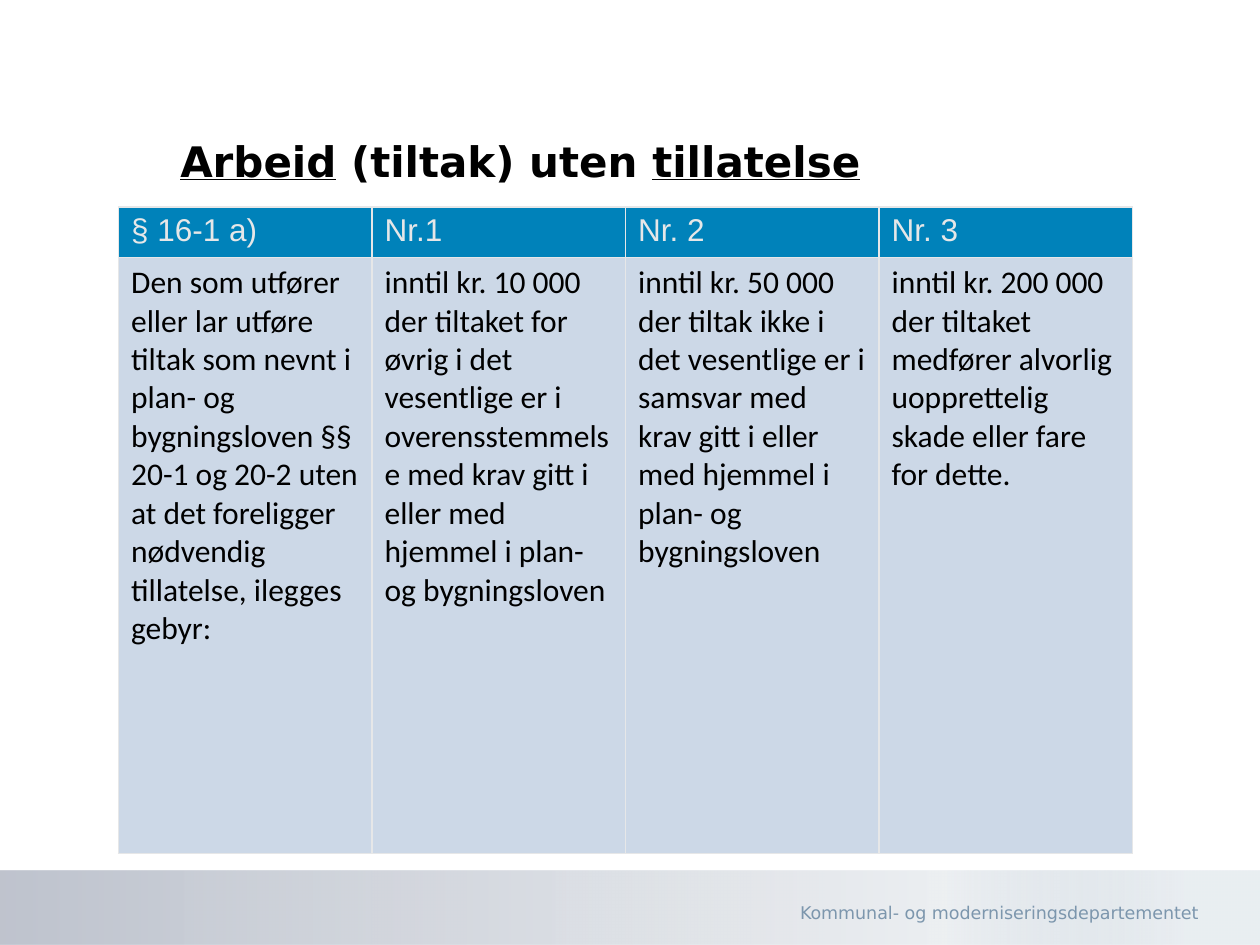
from lxml import etree
from pptx import Presentation
from pptx.dml.color import RGBColor
from pptx.enum.shapes import MSO_SHAPE
from pptx.enum.text import MSO_ANCHOR, PP_ALIGN
from pptx.oxml import parse_xml
from pptx.oxml.ns import nsdecls, qn
from pptx.util import Cm, Pt

RECT = MSO_SHAPE.RECTANGLE
BOTTOM, MIDDLE = MSO_ANCHOR.BOTTOM, MSO_ANCHOR.MIDDLE
LEFT, RIGHT = PP_ALIGN.LEFT, PP_ALIGN.RIGHT
BORDER = "E6E7E8"


def rgb(value):
    return RGBColor.from_string(value)


def add_run(p, text, font, size, color, bold=False, underline=False):
    r = p.add_run()
    r.text = text
    r.font.name = font
    r.font.size = Pt(size)
    r.font.color.rgb = rgb(color)
    r.font.bold = bold
    r.font.underline = underline


prs = Presentation()
prs.slide_width = Cm(25.4)
prs.slide_height = Cm(19.05)
s = prs.slides.add_slide(prs.slide_layouts[5])

band = s.shapes.add_shape(RECT, Cm(0), Cm(17.55), Cm(25.4), Cm(1.5))
band.shadow.inherit = False
band.line.fill.background()
stops = "".join(
    f'<a:gs pos="{pos * 1000}"><a:srgbClr val="{color}">'
    f'<a:alpha val="{alpha * 1000}"/></a:srgbClr></a:gs>'
    for pos, color, alpha in [(0, "7F899E", 50), (75, "D9DFE5", 48), (94, "7C96AD", 16)]
)
gradient = parse_xml(
    f'<a:gradFill {nsdecls("a")} rotWithShape="1"><a:gsLst>{stops}</a:gsLst>'
    '<a:lin ang="0" scaled="0"/></a:gradFill>'
)
band._element.spPr.find(qn("a:prstGeom")).addnext(gradient)

footer = s.shapes.add_textbox(Cm(15.6), Cm(18.06), Cm(8.81), Cm(0.69))
tf = footer.text_frame
tf.word_wrap = True
tf.vertical_anchor = MIDDLE
p = tf.paragraphs[0]
p.alignment = RIGHT
add_run(p, "Kommunal- og moderniseringsdepartementet", "DejaVu Sans", 10, "7C96AD")

title = s.shapes.title
title.left, title.top, title.width, title.height = Cm(3.38), Cm(1.98), Cm(16.89), Cm(1.9)
tf = title.text_frame
tf.vertical_anchor = BOTTOM
p = tf.paragraphs[0]
p.alignment = LEFT
for text, underline in [("Arbeid", True), (" (tiltak) uten ", False), ("tillatelse", True)]:
    add_run(p, text, "DejaVu Sans", 24, "000000", True, underline)

columns = [
    ("§ 16-1 a)",
     "Den som utfører eller lar utføre tiltak som nevnt i plan- og bygningsloven "
     "§§ 20-1 og 20-2 uten at det foreligger nødvendig tillatelse, ilegges gebyr:"),
    ("Nr.1",
     "inntil kr. 10 000 der tiltaket for øvrig i det vesentlige er i overensstemmelse "
     "med krav gitt i eller med hjemmel i plan- og bygningsloven"),
    ("Nr. 2",
     "inntil kr. 50 000 der tiltak ikke i det vesentlige er i samsvar med krav gitt i "
     "eller med hjemmel i plan- og bygningsloven"),
    ("Nr. 3",
     "inntil kr. 200 000 der tiltaket medfører alvorlig uopprettelig skade eller fare "
     "for dette."),
]
row_styles = [("Arial", BORDER, "0082BA"), ("Calibri", "000000", "CCD8E7")]

table = s.shapes.add_table(2, 4, Cm(2.39), Cm(4.17), Cm(20.44), Cm(12.97)).table
table.rows[0].height = Cm(0.95)
table.rows[1].height = Cm(12.02)
for col, texts in enumerate(columns):
    table.columns[col].width = Cm(5.11)
    for row, (text, (font, color, fill)) in enumerate(zip(texts, row_styles)):
        cell = table.cell(row, col)
        tcPr = cell._tc.get_or_add_tcPr()
        for side in ("lnL", "lnR", "lnT", "lnB"):
            ln = etree.SubElement(tcPr, qn(f"a:{side}"), w=str(Pt(1)))
            solid = etree.SubElement(ln, qn("a:solidFill"))
            etree.SubElement(solid, qn("a:srgbClr"), val=BORDER)
        cell.fill.solid()
        cell.fill.fore_color.rgb = rgb(fill)
        add_run(cell.text_frame.paragraphs[0], text, font, 18, color)

prs.save("out.pptx")
